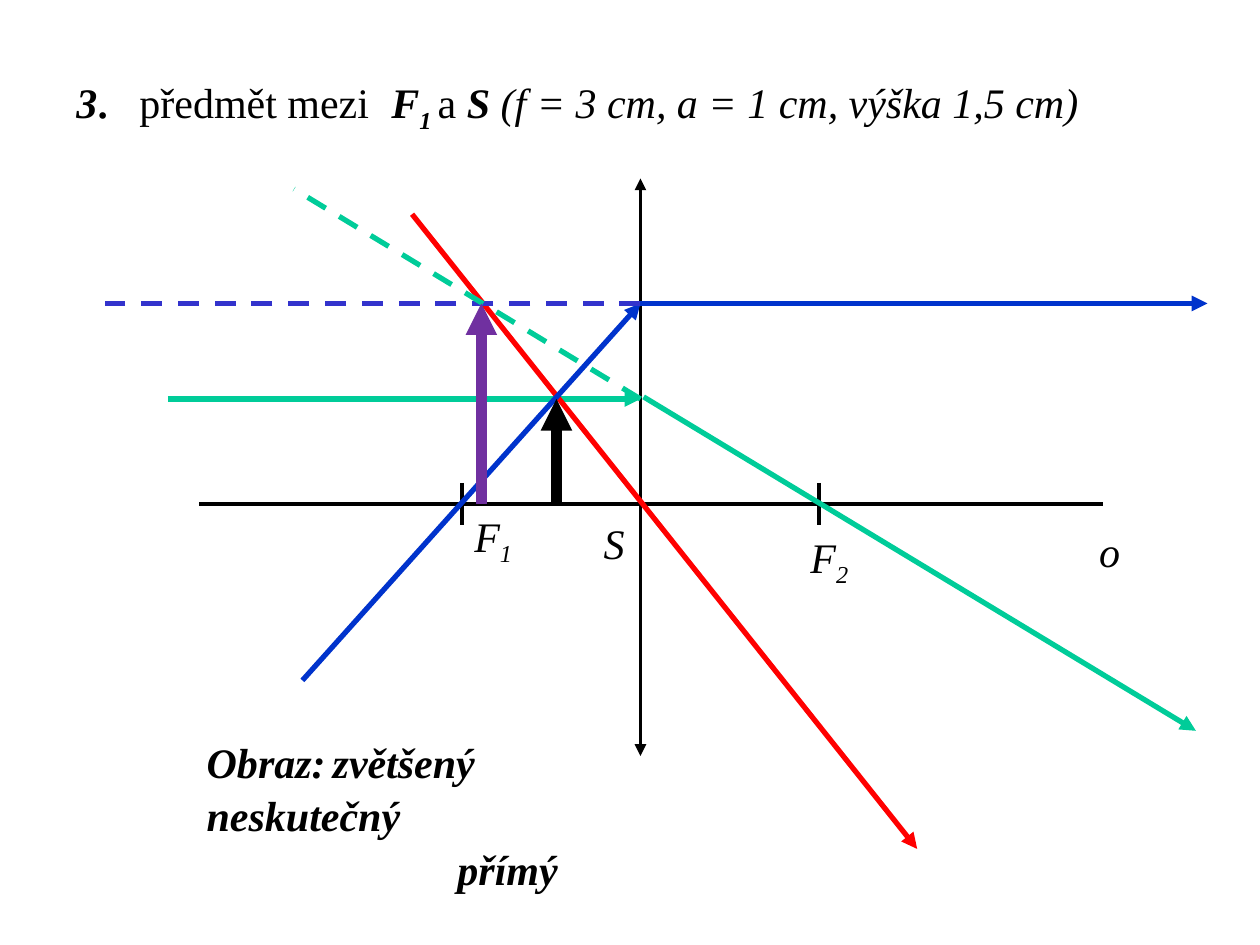
from lxml.etree import SubElement
from pptx import Presentation
from pptx.dml.color import RGBColor
from pptx.enum.dml import MSO_LINE
from pptx.enum.shapes import MSO_CONNECTOR
from pptx.enum.text import MSO_ANCHOR
from pptx.oxml.ns import qn
from pptx.util import Inches, Pt

BLACK = RGBColor(0x00, 0x00, 0x00)
GREEN = RGBColor(0x00, 0xCC, 0x99)
RED = RGBColor(0xFF, 0x00, 0x00)
BLUE = RGBColor(0x00, 0x33, 0xCC)
INDIGO = RGBColor(0x33, 0x33, 0xCC)
PURPLE = RGBColor(0x70, 0x30, 0xA0)

CELL = Inches(1) / 12  # the slide is 120 columns by 90 rows
AXIS_ROW, LENS_COL = 48, 61
FOCUS_COLS = (44, 78)
OBJECT_COL, OBJECT_ROW = 53, 38
IMAGE_COL, IMAGE_ROW = 45.85, 28.9


def cells(*counts):
    return [round(count * CELL) for count in counts]


def add_span(para, text, size=24, bold=False, italic=True, underline=False, subscript=False):
    span = para.add_run()
    span.text = text
    font = span.font
    font.name, font.size = "Times New Roman", Pt(size)
    font.bold, font.italic = bold, italic
    font.color.rgb = BLACK
    if underline:
        font.underline = True
    if subscript:
        span._r.get_or_add_rPr().set("baseline", "-25000")


def set_layout(para, tabs=(), indent=0):
    """Set tab stops and left indent, in inches from the text edge."""
    props = para._p.get_or_add_pPr()
    props.set("marL", str(Inches(indent)))
    props.set("indent", "0")
    if tabs:
        stops = SubElement(props, qn("a:tabLst"))
        for stop in tabs:
            SubElement(stops, qn("a:tab"), pos=str(Inches(stop)), algn="l")


class Diagram:
    def __init__(self, slide):
        self.shapes = slide.shapes

    def line(self, start, end, color=BLACK, width=3, dashed=False, head=False, tail=False):
        """Draw from start to end; head is the arrow at start, tail the one at end."""
        connector = self.shapes.add_connector(MSO_CONNECTOR.STRAIGHT, *cells(*start, *end))
        connector.line.color.rgb = color
        connector.line.width = Pt(width)
        if dashed:
            connector.line.dash_style = MSO_LINE.DASH
        outline = connector.line._get_or_add_ln()
        for tag, wanted in (("a:headEnd", head), ("a:tailEnd", tail)):
            if wanted:
                SubElement(outline, qn(tag), type="triangle")
        SubElement(connector._element.spPr, qn("a:effectLst"))

    def text_box(self, col, row, width, height, anchor=MSO_ANCHOR.TOP):
        box = self.shapes.add_textbox(*cells(col, row, width, height))
        frame = box.text_frame
        frame.word_wrap = True
        frame.vertical_anchor = anchor
        return frame

    def label(self, col, row, width, text, subscript=""):
        para = self.text_box(col, row, width, 6).paragraphs[0]
        add_span(para, text)
        if subscript:
            add_span(para, subscript, subscript=True)

    def title(self):
        para = self.text_box(6.1, 3.5, 102, 11.75, MSO_ANCHOR.MIDDLE).paragraphs[0]
        set_layout(para, tabs=(0.45, 2.52))
        add_span(para, "3", bold=True)
        add_span(para, ".", size=32)
        add_span(para, "\tpředmět mezi\t", italic=False)
        add_span(para, "F", bold=True)
        add_span(para, "1 ", bold=True, subscript=True)
        add_span(para, "a ", italic=False)
        add_span(para, "S ", bold=True)
        add_span(para, "(f = 3 cm, a = 1 cm, výška 1,5 cm)")

    def image_properties(self):
        frame = self.text_box(18.5, 69.6, 39, 15.8)
        rows = (
            ("Obraz:\tzvětšený", dict(tabs=(1.11,))),
            ("neskutečný", dict(tabs=(1.86,))),
            ("přímý", dict(indent=1.99)),
        )
        for index, (text, layout) in enumerate(rows):
            para = frame.add_paragraph() if index else frame.paragraphs[0]
            if index:
                para.space_before = Pt(1.5)
            set_layout(para, **layout)
            add_span(para, text, bold=True)
            if text == "neskutečný":
                add_span(para, "\t", bold=True, underline=True)


def main():
    deck = Presentation()
    deck.slide_width, deck.slide_height = Inches(10), Inches(7.5)
    diagram = Diagram(deck.slides.add_slide(deck.slide_layouts[6]))
    line, label = diagram.line, diagram.label
    lens_top = (LENS_COL, IMAGE_ROW)

    diagram.title()

    # Optical axis, lens and foci
    line((19, AXIS_ROW), (105, AXIS_ROW), width=2.25)
    line((LENS_COL, 17), (LENS_COL, 72), width=2.25, head=True, tail=True)
    for col in FOCUS_COLS:
        line((col, AXIS_ROW - 2), (col, AXIS_ROW + 2), width=2.25)

    # Rays
    line((16, OBJECT_ROW), (LENS_COL, OBJECT_ROW), GREEN, tail=True)
    line((61.3, 37.8), (113.9, 69.6), GREEN, tail=True)
    line((39.25, 20.4), (87.35, 80.85), RED, tail=True)
    line(lens_top, (28.8, 64.8), BLUE, head=True)
    line(lens_top, (115, IMAGE_ROW), BLUE, tail=True)

    # Object, backward extensions of the rays, and image
    line((OBJECT_COL, AXIS_ROW), (OBJECT_COL, OBJECT_ROW), width=6, tail=True)
    line(lens_top, (10, IMAGE_ROW), INDIGO, dashed=True)
    line((LENS_COL, OBJECT_ROW), (28, 18), GREEN, dashed=True)
    line((IMAGE_COL, IMAGE_ROW), (IMAGE_COL, AXIS_ROW), PURPLE, width=6, head=True)

    label(44, 48, 7.5, "F", "1")
    label(76, 50, 7.7, "F", "2")
    label(56.3, 48.7, 4, "S")
    label(103.5, 49.5, 4.7, "o")
    diagram.image_properties()

    deck.save("out.pptx")


if __name__ == "__main__":
    main()
